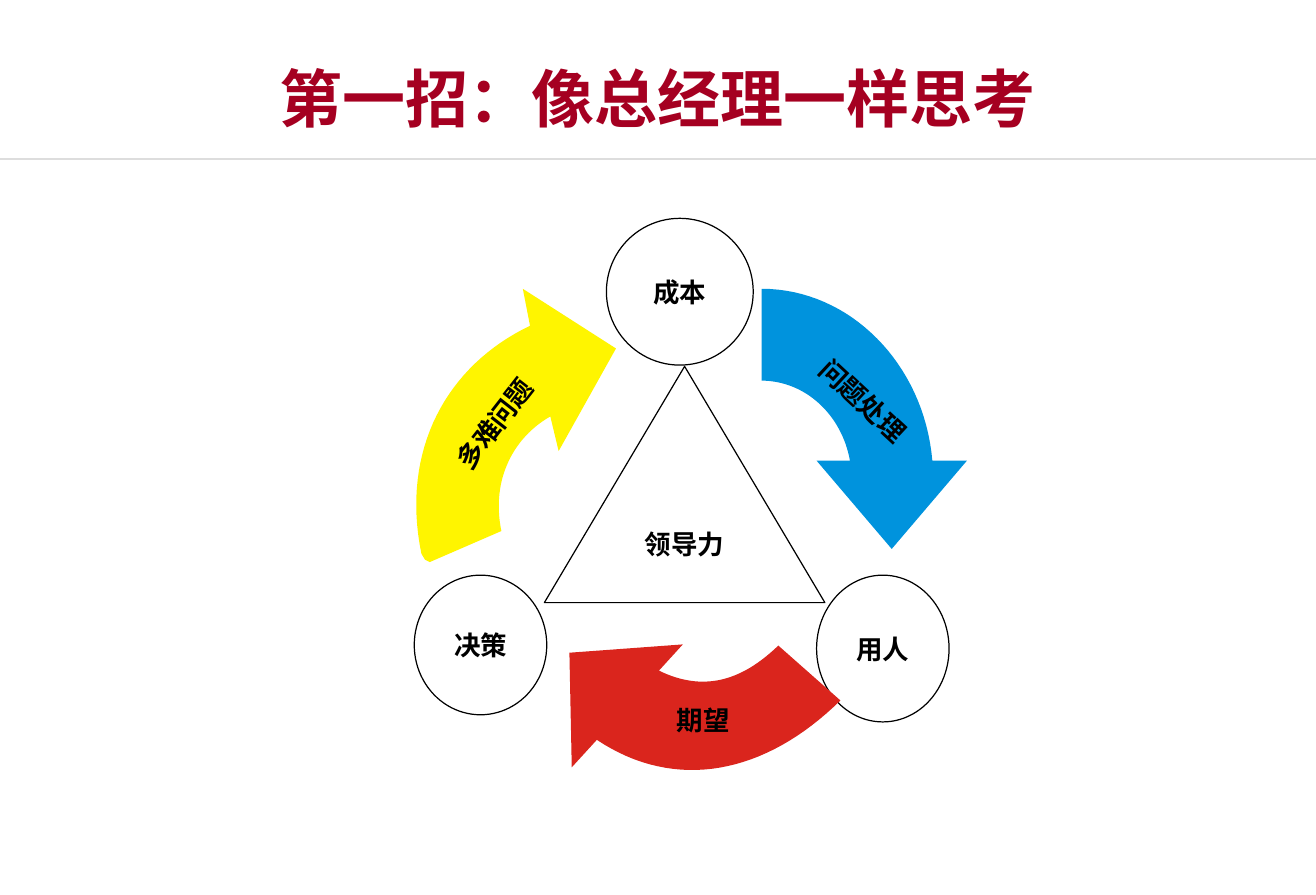
from dataclasses import dataclass

import pptx
import pptx.dml.color
import pptx.enum.shapes
import pptx.enum.text
import pptx.oxml
import pptx.oxml.ns
import pptx.util

RGBColor = pptx.dml.color.RGBColor
Inches = pptx.util.Inches
Pt = pptx.util.Pt
Shape = pptx.enum.shapes.MSO_SHAPE
Align = pptx.enum.text.PP_ALIGN

CRIMSON = RGBColor(0xA5, 0x00, 0x21)
GREY = RGBColor(0xDD, 0xDD, 0xDD)
BLACK = RGBColor(0x00, 0x00, 0x00)
WHITE = RGBColor(0xFF, 0xFF, 0xFF)
BLUE = RGBColor(0x00, 0x93, 0xDD)
YELLOW = RGBColor(0xFF, 0xF5, 0x00)
RED = RGBColor(0xDA, 0x25, 0x1D)
CHINESE_FONT = "Noto Sans CJK SC"
PAGE_WIDTH = pptx.util.Cm(28)
PAGE_HEIGHT = Inches(7.5)
CURVE_STEPS = 32

Point = tuple[float, float]
Box = tuple[float, float, float, float]


@dataclass(frozen=True)
class Node:
    text: str
    kind: int
    box: Box


@dataclass(frozen=True)
class Label:
    text: str
    box: Box
    rotation: float = 0
    align: int = Align.CENTER


@dataclass(frozen=True)
class Curve:
    start: Point
    start_control: Point
    end_control: Point
    end: Point


@dataclass(frozen=True)
class CycleArrow:
    color: RGBColor
    outer: Curve
    head: list[Point]
    inner: Curve
    tail: list[Point]


NODES = [
    Node("领导力", Shape.ISOSCELES_TRIANGLE, (4.56, 3.07, 2.35, 1.98)),
    Node("用人", Shape.OVAL, (6.84, 4.82, 1.11, 1.23)),
    Node("决策", Shape.OVAL, (3.47, 4.82, 1.11, 1.17)),
    Node("成本", Shape.OVAL, (5.08, 1.83, 1.23, 1.23)),
]
ARROWS = [
    CycleArrow(
        BLUE,
        Curve((6.38, 2.42), (7.12, 2.42), (7.74, 3.05), (7.81, 3.86)),
        [(8.1, 3.86), (7.47, 4.6), (6.84, 3.86)],
        Curve((7.12, 3.86), (7.05, 3.47), (6.74, 3.19), (6.38, 3.19)),
        [],
    ),
    CycleArrow(
        YELLOW,
        Curve((3.53, 4.64), (3.35, 3.76), (3.75, 3.06), (4.44, 2.73)),
        [(4.38, 2.42), (5.16, 2.92), (4.68, 3.78)],
        Curve((4.61, 3.49), (4.31, 3.66), (4.11, 4.01), (4.2, 4.45)),
        [(3.6, 4.71), (3.56, 4.69)],
    ),
    CycleArrow(
        RED,
        Curve((7.04, 5.87), (6.41, 6.49), (5.66, 6.64), (5.0, 6.2)),
        [(4.79, 6.43), (4.77, 5.47), (5.72, 5.4)],
        Curve((5.52, 5.62), (5.89, 5.8), (6.21, 5.71), (6.52, 5.41)),
        [],
    ),
]
LABELS = [
    Label("多难问题", (3.5, 3.16, 1.6, 0.37), 308, Align.LEFT),
    Label("期望", (5.12, 5.85, 1.54, 0.37)),
    Label("问题处理", (6.46, 3.17, 1.54, 0.37), 43),
]


def write_text(shape, text: str, *, size: float = 16, font: str = "Arial",
               color: RGBColor = BLACK, align: int = Align.CENTER,
               wrap: bool = True, inset: float | None = None) -> None:
    frame = shape.text_frame
    frame.word_wrap = wrap
    frame.vertical_anchor = pptx.enum.text.MSO_ANCHOR.MIDDLE
    if inset is not None:
        frame.margin_left = frame.margin_right = Inches(inset)
        frame.margin_top = frame.margin_bottom = Inches(inset)
    para = frame.paragraphs[0]
    para.alignment = align
    span = para.add_run()
    span.text = text
    span.font.size = Pt(size)
    span.font.name = font
    span.font.bold = True
    span.font.color.rgb = color
    east_asian = pptx.oxml.parse_xml(
        f'<a:ea {pptx.oxml.ns.nsdecls("a")} typeface="{CHINESE_FONT}"/>')
    span.font._element.find(pptx.oxml.ns.qn("a:latin")).addnext(east_asian)


def add_title(page) -> None:
    line = page.shapes.add_connector(
        pptx.enum.shapes.MSO_CONNECTOR.STRAIGHT,
        Inches(0), Inches(1.33), PAGE_WIDTH, Inches(1.33))
    line.line.color.rgb = GREY
    line.line.width = Pt(1)
    line._element.spPr.append(pptx.oxml.parse_xml(
        f'<a:effectLst {pptx.oxml.ns.nsdecls("a")}/>'))
    title = page.shapes.add_textbox(
        Inches(0), Inches(0.5), PAGE_WIDTH, Inches(0.63))
    write_text(title, "第一招：像总经理一样思考", size=38,
               font=CHINESE_FONT, color=CRIMSON, inset=0)


def add_node(page, node: Node) -> None:
    shape = page.shapes.add_shape(node.kind, *map(Inches, node.box))
    shape.shadow.inherit = False
    shape.fill.solid()
    shape.fill.fore_color.rgb = WHITE
    shape.line.color.rgb = BLACK
    shape.line.width = Pt(0.75)
    write_text(shape, node.text, wrap=False)


def curve_points(curve: Curve) -> list[Point]:
    """Sample a cubic Bezier curve, both ends included."""
    controls = (curve.start, curve.start_control, curve.end_control, curve.end)
    points = []
    for step in range(CURVE_STEPS + 1):
        t = step / CURVE_STEPS
        weights = ((1 - t) ** 3, 3 * t * (1 - t) ** 2,
                   3 * t ** 2 * (1 - t), t ** 3)
        x, y = (sum(weight * control[axis]
                    for weight, control in zip(weights, controls))
                for axis in (0, 1))
        points.append((x, y))
    return points


def add_arrow(page, arrow: CycleArrow) -> None:
    outline = [*curve_points(arrow.outer), *arrow.head,
               *curve_points(arrow.inner), *arrow.tail]
    first, *rest = [(Inches(x), Inches(y)) for x, y in outline]
    builder = page.shapes.build_freeform(*first)
    builder.add_line_segments(rest, close=True)
    shape = builder.convert_to_shape()
    shape.shadow.inherit = False
    shape.fill.solid()
    shape.fill.fore_color.rgb = arrow.color
    shape.line.fill.background()


def add_label(page, label: Label) -> None:
    textbox = page.shapes.add_textbox(*map(Inches, label.box))
    textbox.rotation = label.rotation
    write_text(textbox, label.text, align=label.align)


def main() -> None:
    deck = pptx.Presentation()
    deck.slide_width = PAGE_WIDTH
    deck.slide_height = PAGE_HEIGHT
    page = deck.slides.add_slide(deck.slide_layouts[6])
    add_title(page)
    for node in NODES:
        add_node(page, node)
    for arrow in ARROWS:
        add_arrow(page, arrow)
    for label in LABELS:
        add_label(page, label)
    deck.save("out.pptx")


if __name__ == "__main__":
    main()
